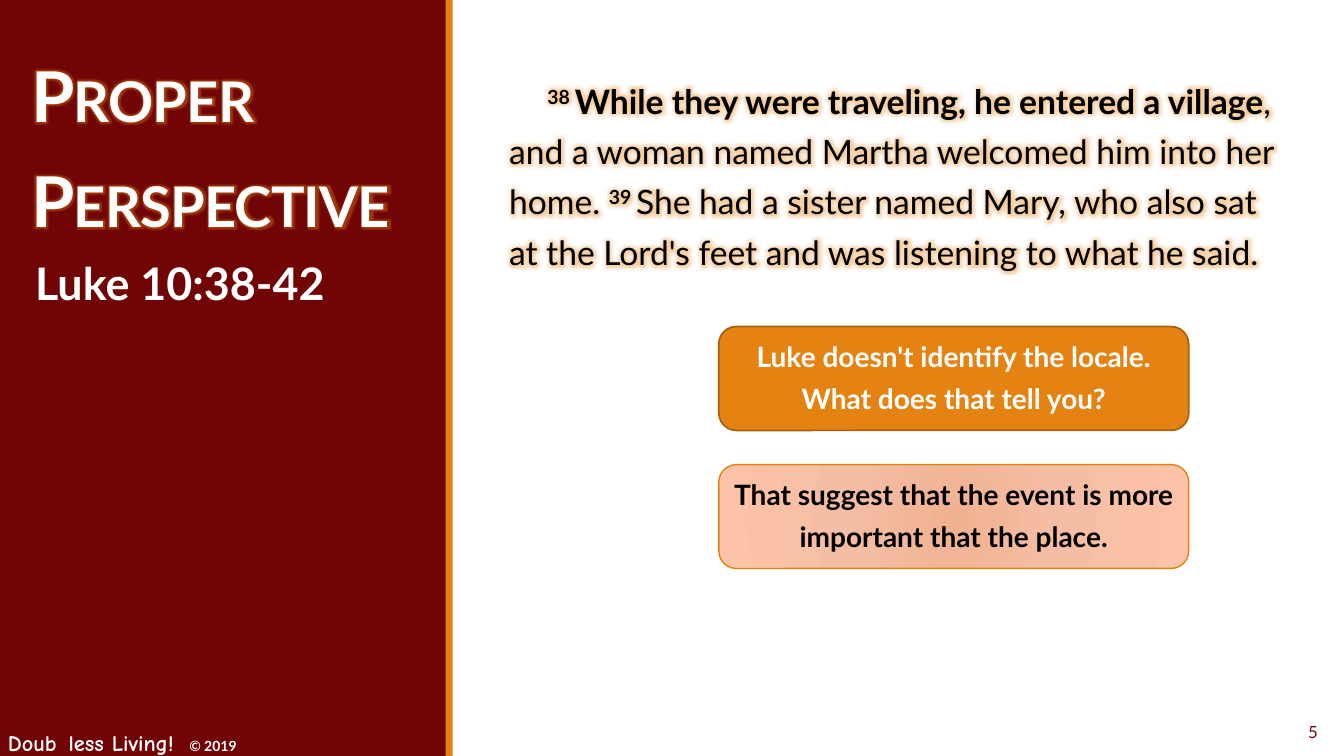
import pptx
import pptx.dml.color
import pptx.enum.shapes
import pptx.enum.text
import pptx.oxml
import pptx.oxml.ns
import pptx.util
import lxml.etree

Inches = pptx.util.Inches
Pt = pptx.util.Pt
ALIGN = pptx.enum.text.PP_ALIGN
ANCHOR = pptx.enum.text.MSO_ANCHOR
SHAPE = pptx.enum.shapes.MSO_SHAPE
NAMESPACE = pptx.oxml.ns.nsdecls("a")

MAROON, ORANGE, WHITE, BLACK = "710505", "E48312", "FFFFFF", "000000"


def color(value):
    return pptx.dml.color.RGBColor.from_string(value)


def add_span(para, text, size, tint, bold=False, face="Lato", glow=None, **extra):
    span = para.add_run()
    span.text = text
    for name, value in {"size": Pt(size), "bold": bold, "name": face}.items():
        setattr(span.font, name, value)
    span.font.color.rgb = color(tint)
    properties = span.font._element
    for name, value in extra.items():
        properties.set(name, str(value))
    if glow:
        radius, alpha = glow
        effect = pptx.oxml.parse_xml(
            f'<a:effectLst {NAMESPACE}><a:glow rad="{Pt(radius)}"><a:srgbClr val="{ORANGE}">'
            f'<a:alpha val="{alpha * 1000}"/></a:srgbClr></a:glow></a:effectLst>'
        )
        properties.find(pptx.oxml.ns.qn("a:solidFill")).addnext(effect)


deck = pptx.Presentation()
deck.slide_width, deck.slide_height = Inches(13.33), Inches(7.5)
page = deck.slides.add_slide(deck.slide_layouts[6])

for left, width, tint in [(0, 4.43, MAROON), (4.42, 0.07, ORANGE)]:
    band = page.shapes.add_shape(SHAPE.RECTANGLE, Inches(left), 0, Inches(width), Inches(7.5))
    band.shadow.inherit = False
    band.fill.solid()
    band.fill.fore_color.rgb = color(tint)
    band.line.fill.background()

text_areas = {
    "footer": (-0.02, 7.07, 3.92, 0.5),
    "number": (11.82, 7.06, 1.35, 0.4),
    "verses": (5.05, 0.65, 7.74, 6.42),
    "title": (0.21, 0.26, 4, 2.98),
    "passage": (0.25, 2.49, 3.71, 0.64),
}
frames = {}
for name, area in text_areas.items():
    box = page.shapes.add_textbox(*map(Inches, area))
    box.text_frame.word_wrap = True
    frames[name] = box.text_frame

footer = frames["footer"].paragraphs[0]
tabs = lxml.etree.SubElement(footer._p.get_or_add_pPr(), pptx.oxml.ns.qn("a:tabLst"))
lxml.etree.SubElement(tabs, pptx.oxml.ns.qn("a:tab"), pos=str(Inches(1.8)), algn="l")
for text, size, face in [
    ("Doub", 16, "Comic Neue"),
    (" ", 24, "Comic Neue"),
    ("less Living!", 16, "Comic Neue"),
    ("\t© 2019", 10, "Lato"),
]:
    add_span(footer, text, size, WHITE, True, face)

frames["number"].vertical_anchor = ANCHOR.MIDDLE
number = frames["number"].paragraphs[0]
number.alignment = ALIGN.RIGHT
add_span(number, "5", 12, MAROON)

frames["verses"].margin_left = frames["verses"].margin_right = 0
verses = frames["verses"].paragraphs[0]
verses.line_spacing = 1.25
verses.space_after = Pt(2)
verses._p.get_or_add_pPr().set("indent", str(Inches(0.38)))
for text, bold, raised in [
    ("38 ", True, 30),
    ("While they were traveling, he entered a village", True, 0),
    (", and a woman named Martha welcomed him into her home. ", False, 0),
    ("39 ", True, 30),
    ("She had a sister named Mary, who also sat at the Lord's feet "
     "and was listening to what he said.", False, 0),
]:
    add_span(verses, text, 24, BLACK, bold, glow=(8, 40), baseline=raised * 1000)

title = frames["title"].paragraphs[0]
title.line_spacing = 1.25
add_span(title, "Proper Perspective", 50, WHITE, True, glow=(5, 40), cap="small", spc=-50)

add_span(frames["passage"].paragraphs[0], "Luke 10:38-42", 32, WHITE, True)

cards = [
    (3.24, "Luke doesn't identify the locale. What does that tell you?", WHITE, "A9610D", 1.25),
    (4.61, "That suggest that the event is more important that the place.", BLACK, ORANGE, 1),
]
for top, text, tint, edge, weight in cards:
    card = page.shapes.add_shape(
        SHAPE.ROUNDED_RECTANGLE, Inches(7.13), Inches(top), Inches(4.66), Inches(1.03)
    )
    card.shadow.inherit = False
    card.fill.solid()
    card.fill.fore_color.rgb = color(ORANGE)
    card.line.color.rgb = color(edge)
    card.line.width = Pt(weight)
    frame = card.text_frame
    for name, value in {
        "word_wrap": True,
        "vertical_anchor": ANCHOR.MIDDLE,
        "margin_top": 0,
        "margin_bottom": Inches(0.1),
    }.items():
        setattr(frame, name, value)
    para = frame.paragraphs[0]
    para.alignment = ALIGN.CENTER
    para.line_spacing = 1.25
    add_span(para, text, 20, tint, True)

stops = "".join(
    f'<a:gs pos="{place * 1000}"><a:srgbClr val="{tint}"/></a:gs>'
    for place, tint in [(0, "F0B191"), (45, "F5BEA4"), (100, "FDC3A8")]
)
gradient = pptx.oxml.parse_xml(
    f'<a:gradFill {NAMESPACE} rotWithShape="1"><a:gsLst>{stops}</a:gsLst><a:path path="circle">'
    '<a:fillToRect l="100000" t="100000" r="100000" b="100000"/></a:path></a:gradFill>'
)
answer = card._element.spPr
answer.replace(answer.find(pptx.oxml.ns.qn("a:solidFill")), gradient)

deck.save("out.pptx")
